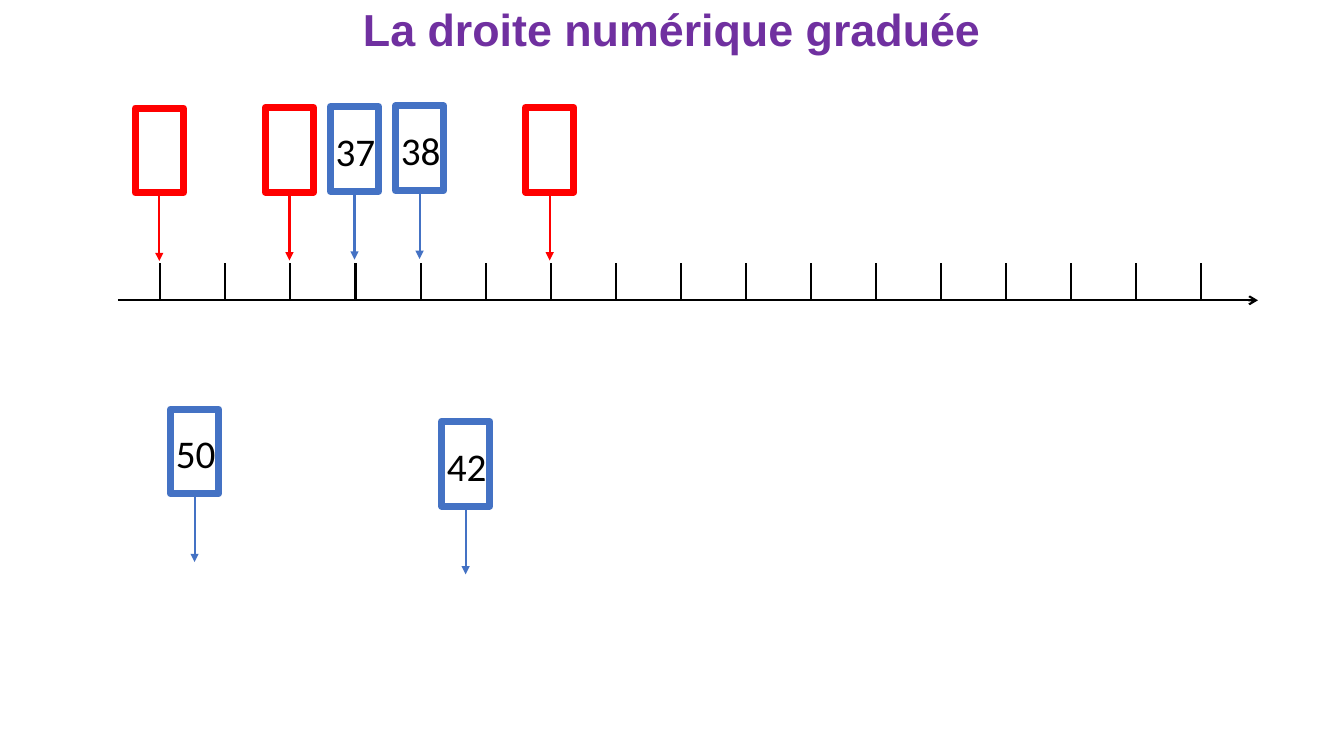
from lxml.etree import SubElement
from pptx import Presentation
from pptx.dml.color import RGBColor
from pptx.enum.shapes import MSO_CONNECTOR, MSO_SHAPE
from pptx.enum.text import MSO_ANCHOR, MSO_AUTO_SIZE, PP_ALIGN
from pptx.oxml.ns import qn
from pptx.util import Pt

COLORS = {"blue": "4472C4", "red": "FF0000", "black": "000000", "purple": "7030A0"}
SLIDE_WIDTH, SLIDE_HEIGHT = 960, 540
AXIS_LEFT, AXIS_RIGHT, AXIS_Y = 84.3, 898.6, 214.5
FIRST_TICK, TICK_STEP, TICK_COUNT, TICK_HEIGHT = 114.5, 46.48, 17, 26.6
CARD_WIDTH, CARD_HEIGHT, ARROW_LENGTH = 34.5, 60.5, 48.8
LABEL_WIDTH, LABEL_HEIGHT, LABEL_OFFSET = 63.4, 41.2, 11.1
FIRST_CARD = 113.8
AXIS_CARDS = [
    (3, 76.2, "37", "blue"),
    (4, 75.7, "38", "blue"),
    (2, 76.8, "", "red"),
    (0, 77.2, "", "red"),
    (6, 76.8, "", "red"),
]
LOOSE_CARDS = [(332.6, 301, "42"), (139, 292.2, "50")]


def write_text(shape, text, size, font, color, bold=False, anchor=MSO_ANCHOR.TOP,
               line_spacing=None, auto_size=MSO_AUTO_SIZE.NONE):
    frame = shape.text_frame
    frame.word_wrap = True
    frame.auto_size = auto_size
    frame.vertical_anchor = anchor
    paragraph = frame.paragraphs[0]
    paragraph.alignment = PP_ALIGN.CENTER
    paragraph.line_spacing = line_spacing
    run = paragraph.add_run()
    run.text = text
    run.font.size = Pt(size)
    run.font.name = font
    run.font.bold = bold
    run.font.color.rgb = RGBColor.from_string(COLORS[color])


class NumberLineSlide:
    line_width = 1.5
    border_width = 5

    def __init__(self, slide):
        self.slide = slide

    def text_box(self, shapes, left, top, width, height, text, **text_format):
        shape = shapes.add_textbox(Pt(left), Pt(top), Pt(width), Pt(height))
        write_text(shape, text, **text_format)

    def line(self, shapes, start, end, color, arrowhead=None):
        points = [Pt(value) for value in (*start, *end)]
        connector = shapes.add_connector(MSO_CONNECTOR.STRAIGHT, *points)
        connector.line.width = Pt(self.line_width)
        connector.line.color.rgb = RGBColor.from_string(COLORS[color])
        if arrowhead:
            SubElement(connector.line._get_or_add_ln(), qn("a:tailEnd"), type=arrowhead)
        SubElement(connector._element.spPr, qn("a:effectLst"))
        return connector

    def axis(self):
        shapes = self.slide.shapes.add_group_shape().shapes
        self.line(shapes, (AXIS_LEFT, AXIS_Y), (AXIS_RIGHT, AXIS_Y), "black", "arrow")
        for index in range(TICK_COUNT):
            x = FIRST_TICK + index * TICK_STEP
            self.line(shapes, (x, AXIS_Y), (x, AXIS_Y - TICK_HEIGHT), "black")

    def card(self, center, top, number, color):
        shapes = self.slide.shapes.add_group_shape().shapes
        frame = shapes.add_shape(MSO_SHAPE.RECTANGLE, Pt(center - CARD_WIDTH / 2), Pt(top),
                                 Pt(CARD_WIDTH), Pt(CARD_HEIGHT))
        frame.shadow.inherit = False
        frame.fill.background()
        frame.line.width = Pt(self.border_width)
        frame.line.color.rgb = RGBColor.from_string(COLORS[color])
        if number:
            self.text_box(shapes, center - LABEL_WIDTH / 2 + 0.7, top + LABEL_OFFSET,
                          LABEL_WIDTH, LABEL_HEIGHT, number, size=28, font="Calibri",
                          color="black", auto_size=MSO_AUTO_SIZE.SHAPE_TO_FIT_TEXT)
        bottom = top + CARD_HEIGHT
        arrow = self.line(shapes, (center, bottom), (center, bottom + ARROW_LENGTH),
                          color, "triangle")
        arrow.begin_connect(frame, 2)

    def title(self, text):
        self.text_box(self.slide.shapes, 0, 0, SLIDE_WIDTH, 46, text, size=32, font="Arial",
                      color="purple", bold=True, anchor=MSO_ANCHOR.MIDDLE, line_spacing=0.9)


def main():
    presentation = Presentation()
    presentation.slide_width = Pt(SLIDE_WIDTH)
    presentation.slide_height = Pt(SLIDE_HEIGHT)
    page = NumberLineSlide(presentation.slides.add_slide(presentation.slide_layouts[6]))
    page.axis()
    for tick, top, number, color in AXIS_CARDS:
        page.card(FIRST_CARD + tick * TICK_STEP, top, number, color)
    for center, top, number in LOOSE_CARDS:
        page.card(center, top, number, "blue")
    page.title("La droite numérique graduée")
    presentation.save("out.pptx")


if __name__ == "__main__":
    main()
